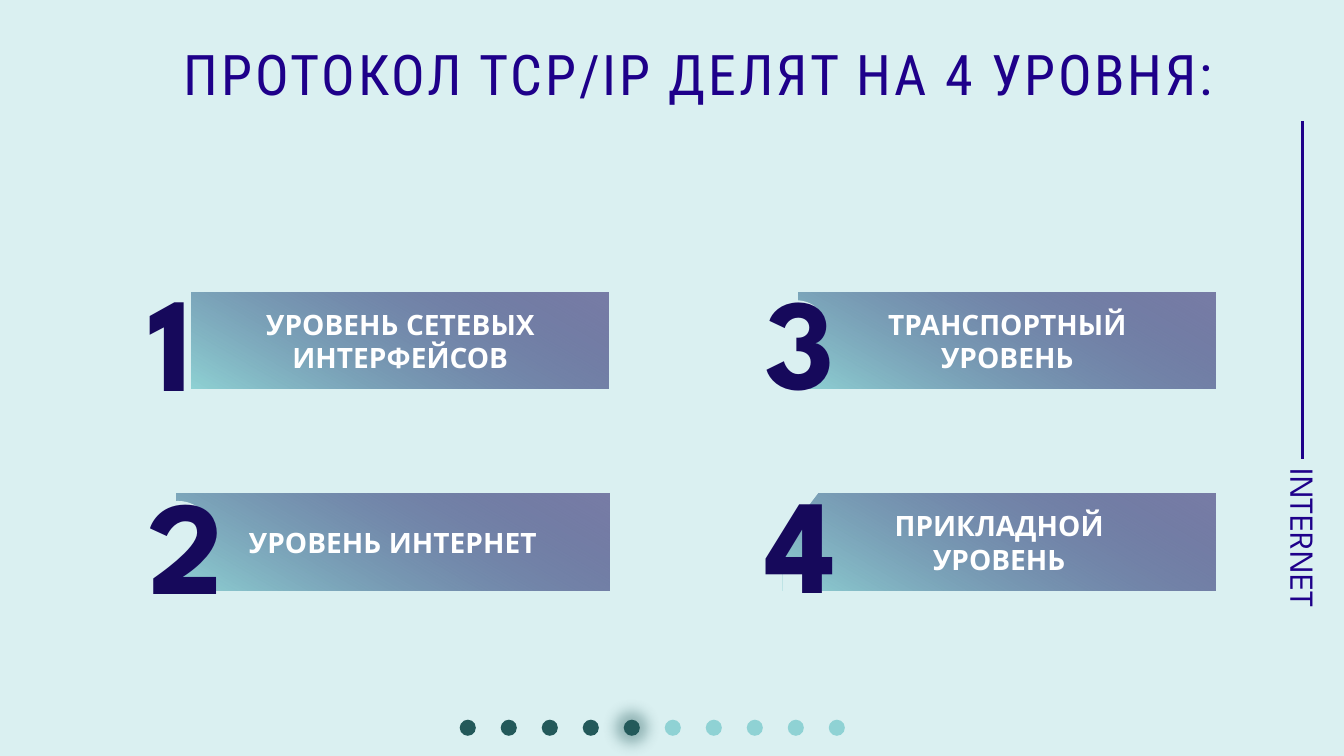
from lxml import etree
from pptx import Presentation
from pptx.dml.color import RGBColor
from pptx.enum import shapes, text
from pptx.oxml.ns import qn
from pptx.util import Inches, Pt

ICE = RGBColor(0xDA, 0xF0, 0xF1)
AQUA = RGBColor(0x8F, 0xD2, 0xD4)
TEAL = RGBColor(0x23, 0x59, 0x5A)
NAVY = RGBColor(0x16, 0x09, 0x5B)
INDIGO = RGBColor(0x1E, 0x00, 0x8A)
WHITE = RGBColor(0xFF, 0xFF, 0xFF)
DISPLAY = "League Spartan"
HEADING = "Roboto Condensed"
RECT = shapes.MSO_SHAPE.RECTANGLE
OVAL = shapes.MSO_SHAPE.OVAL

COLUMNS = [(1.37, 4.67), (7.49, 4.57)]
ROWS = [2.9, 4.9]
LEVELS = [
    (0, 0, "1", 96, -0.4, 1.06, 0.53, ["УРОВЕНЬ СЕТЕВЫХ ИНТЕРФЕЙСОВ"], []),
    (0, 1, "2", 95, -0.37, 1.3, 0.38, ["УРОВЕНЬ ИНТЕРНЕТ"],
     [(RECT, 0.19, 0.43, 0.34, 0.29, 0), (OVAL, 0.09, 0.07, 0.61, 0.52, 0)]),
    (1, 0, "3", 92, -0.36, 1.26, 0.43, ["ТРАНСПОРТНЫЙ", "УРОВЕНЬ"],
     [(OVAL, 0.27, 0.46, 0.39, 0.44, 0), (OVAL, 0.16, 0.08, 0.5, 0.38, 0)]),
    (1, 1, "4", 96, -0.39, 1.41, 0.27, ["ПРИКЛАДНОЙ", "УРОВЕНЬ"],
     [(RECT, -0.05, -0.66, 0.63, 1.21, 37.1), (RECT, 0.27, 0.65, 0.39, 0.36, 0)]),
]


def add_plain(slide, kind, left, top, width, height, color):
    plain = slide.shapes.add_shape(
        kind, Inches(left), Inches(top), Inches(width), Inches(height))
    plain.shadow.inherit = False
    plain.line.fill.background()
    plain.fill.solid()
    plain.fill.fore_color.rgb = color
    return plain


def style(frame, size, font, color, bold=False, align=None):
    for paragraph in frame.paragraphs:
        paragraph.alignment = align
        for run in paragraph.runs:
            run.font.size = Pt(size)
            run.font.name = font
            run.font.bold = bold
            run.font.color.rgb = color


def add_label(slide, wording, left, top, width, height, size, color, bold):
    label = slide.shapes.add_textbox(
        Inches(left), Inches(top), Inches(width), Inches(height))
    label.text_frame.word_wrap = True
    label.text_frame.text = wording
    style(label.text_frame, size, DISPLAY, color, bold)
    return label


def add_heading(slide, left, top, width, height):
    heading = slide.shapes.title
    heading.left, heading.top = Inches(left), Inches(top)
    heading.width, heading.height = Inches(width), Inches(height)
    frame = heading.text_frame
    frame.text = "ПРОТОКОЛ TCP/IP ДЕЛЯТ НА 4 УРОВНЯ:"
    frame.auto_size = text.MSO_AUTO_SIZE.NONE
    frame.vertical_anchor = text.MSO_ANCHOR.TOP
    frame.paragraphs[0].line_spacing = 0.9
    style(frame, 40, HEADING, INDIGO, align=text.PP_ALIGN.CENTER)
    frame.paragraphs[0].runs[0].font._element.set("spc", "200")


def add_level(slide, left, top, width, number, size, rise, number_width,
              indent, lines, cutouts):
    bar = add_plain(slide, RECT, left + indent, top, width - indent, 0.96, AQUA)
    bar.fill.gradient()
    bar.fill.gradient_angle = 60
    for stop, color, position in zip(bar.fill.gradient_stops, (AQUA, NAVY), (0, 1)):
        stop.color.rgb = color
        stop.position = position
    end_color = bar._element.spPr.findall(".//" + qn("a:srgbClr"))[-1]
    etree.SubElement(end_color, qn("a:alpha"), val="50000")
    frame = bar.text_frame
    frame.text = "\n".join(lines)
    frame.vertical_anchor = text.MSO_ANCHOR.MIDDLE
    style(frame, 20, DISPLAY, WHITE, True, text.PP_ALIGN.CENTER)

    for kind, dx, dy, cut_width, cut_height, angle in cutouts:
        cutout = add_plain(slide, kind, left + dx, top + dy, cut_width, cut_height, ICE)
        cutout.rotation = angle
    add_label(slide, number, left, top + rise, number_width, 1.7, size, NAVY, True)


def add_side_mark(slide, center, top, bottom):
    rule = slide.shapes.add_connector(
        shapes.MSO_CONNECTOR.STRAIGHT,
        Inches(center), Inches(top), Inches(center), Inches(bottom))
    rule.line.color.rgb = INDIGO
    rule.line.width = Pt(2.5)
    etree.SubElement(rule._element.spPr, qn("a:effectLst"))
    length, depth = 1.88, 0.5
    topic = add_label(slide, "INTERNET", center + 0.01 - length / 2,
                      bottom + (length - depth) / 2, length, depth, 24, INDIGO, False)
    topic.rotation = 90


def add_progress(slide, left, top, count, current):
    for index in range(count):
        color = TEAL if index < current else AQUA
        dot = add_plain(slide, OVAL, left + index * 3.66 / (count - 1), top,
                        0.16, 0.16, color)
        if index == current - 1:
            effects = dot._element.spPr.find(qn("a:effectLst"))
            shadow = etree.SubElement(effects, qn("a:outerShdw"), blurRad="127000",
                                      sx="200000", sy="200000", algn="ctr",
                                      rotWithShape="0")
            tint = etree.SubElement(shadow, qn("a:srgbClr"), val=str(TEAL))
            etree.SubElement(tint, qn("a:alpha"), val="40000")


def main():
    deck = Presentation()
    deck.slide_width, deck.slide_height = Inches(13.33), Inches(7.5)
    slide = deck.slides.add_slide(deck.slide_layouts[5])
    slide.background.fill.solid()
    slide.background.fill.fore_color.rgb = ICE

    add_heading(slide, 1.37, 0.42, 11.13, 1.63)
    for column, row, *level in LEVELS:
        left, width = COLUMNS[column]
        add_level(slide, left, ROWS[row], width, *level)
    add_side_mark(slide, 12.92, 1.2, 4.55)
    add_progress(slide, 4.56, 7.14, 10, 5)
    deck.save("out.pptx")


if __name__ == "__main__":
    main()
